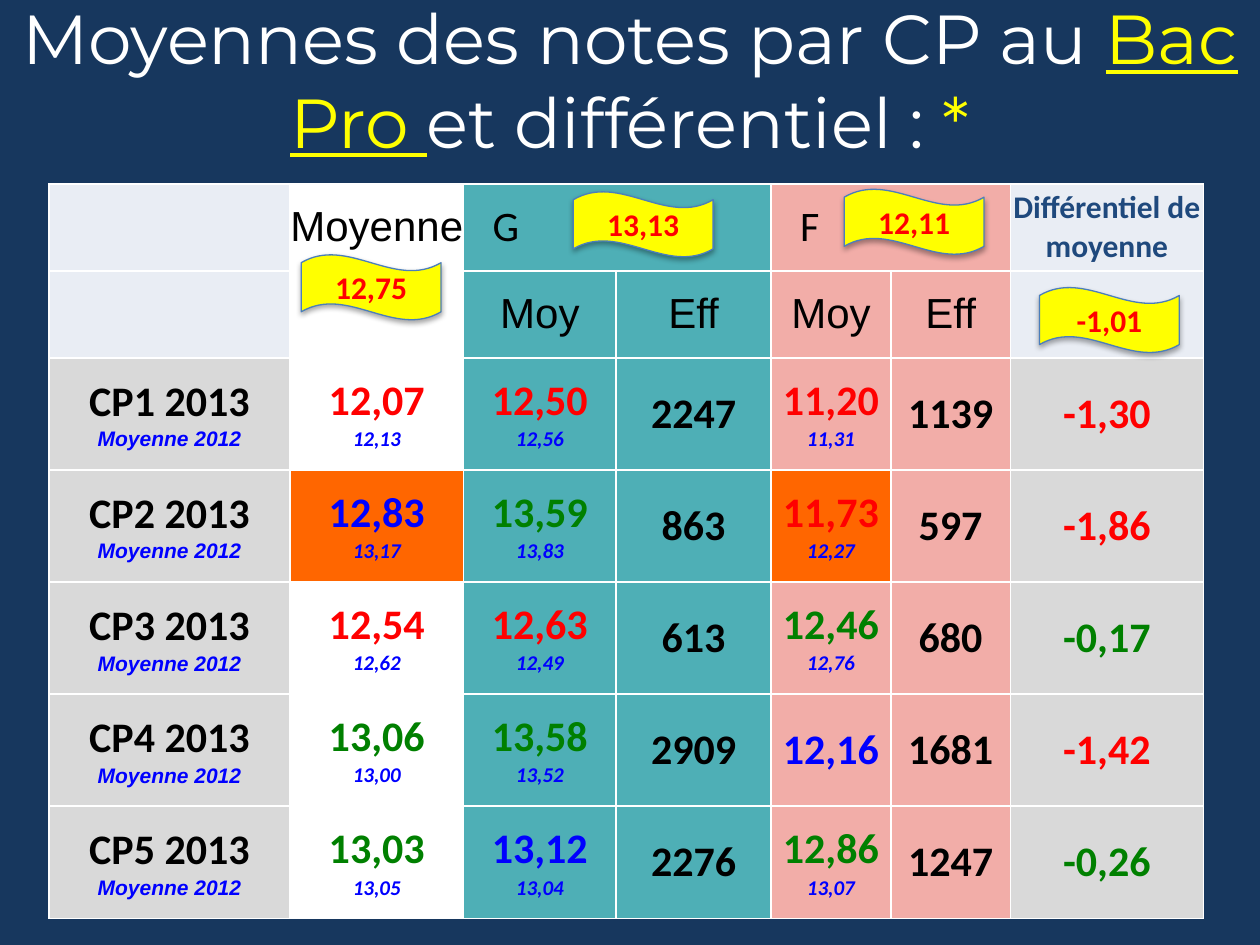
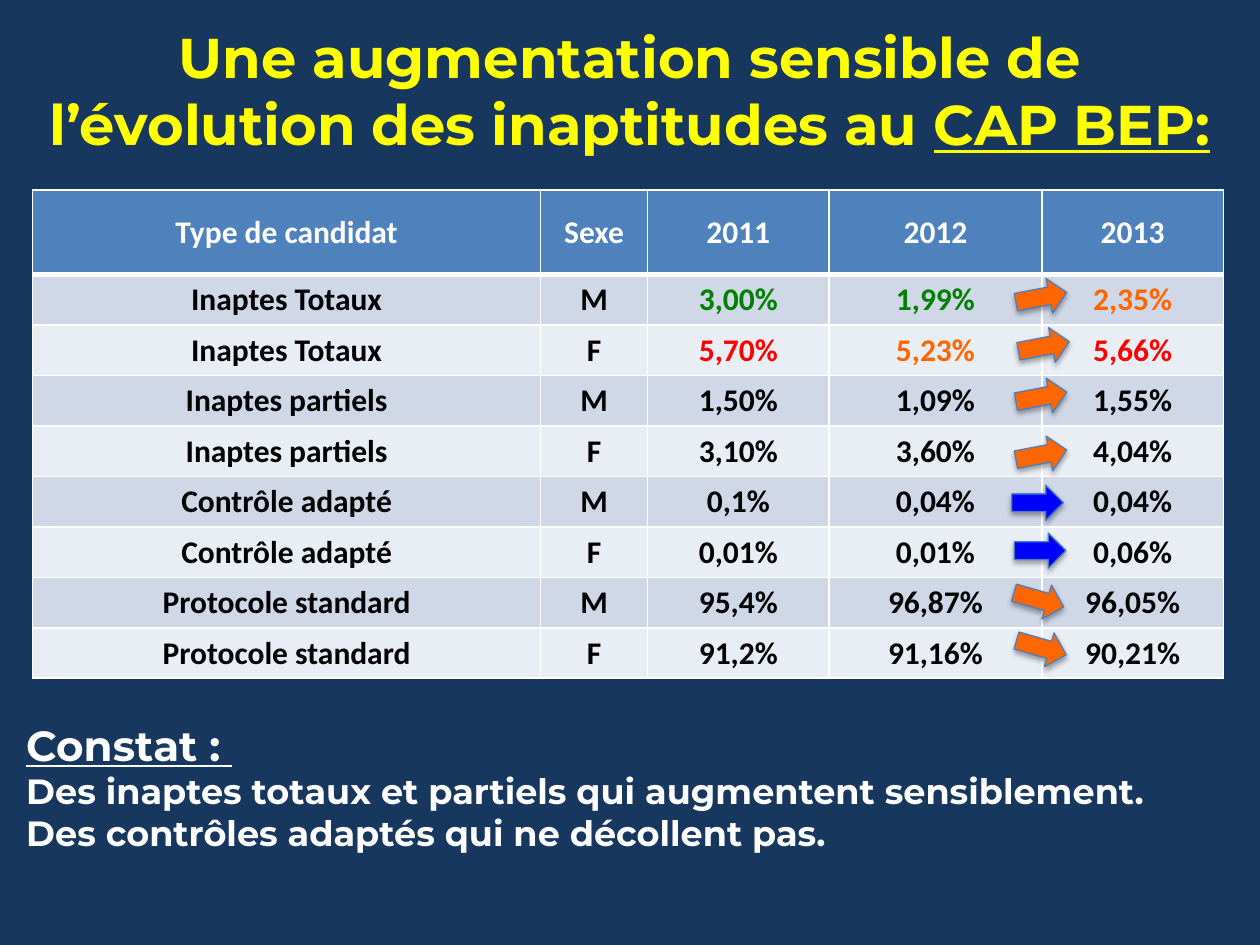
from dataclasses import dataclass
from lxml.etree import SubElement as Sub
from pptx import Presentation as Deck
from pptx.dml.color import RGBColor as Rgb
from pptx.enum.shapes import MSO_SHAPE as Form
from pptx.enum.text import MSO_ANCHOR as Anchor, PP_ALIGN as Align
from pptx.oxml.ns import qn
from pptx.util import Inches, Pt


@dataclass(frozen=True)
class Theme:
    navy: str = "17375E"
    white: str = "FFFFFF"
    black: str = "000000"
    yellow: str = "FFFF00"
    red: str = "FF0000"
    green: str = "008000"
    blue: str = "0000FF"
    orange: str = "FF6600"
    teal: str = "4EAFB6"
    pink: str = "F2ADA8"
    grey: str = "D9D9D9"
    pale: str = "E9EDF4"
    band: str = "D0D8E8"
    head: str = "4F81BD"
    ink: str = "1F497D"
    edge: str = "4B7EBC"
    title: float = 39.6
    topic: float = 32
    large: float = 24
    body: float = 20
    text: float = 18
    small: float = 12
    show: str = "Montserrat"
    main: str = "Calibri"
    plain: str = "Arial"


T = Theme()


@dataclass(frozen=True)
class Face:
    size: float = T.text
    hue: str = T.black
    font: str = T.main
    bold: bool = True
    slant: bool = False
    under: bool = False


PLAIN = Face(T.large, font=T.plain, bold=False)
GENDER = Face(T.large, bold=False)

WAVES = [
    ("12,75", 2.39, 2.02),
    ("12,11", 6.7, 1.5),
    ("13,13", 4.55, 1.52),
    ("-1,01", 8.25, 2.28),
]
MARKS = [
    [("12,07", "12,13", T.red), ("12,50", "12,56", T.red), ("2247", "", T.black),
     ("11,20", "11,31", T.red), ("1139", "", T.black), ("-1,30", "", T.red)],
    [("12,83", "13,17", T.blue), ("13,59", "13,83", T.green), ("863", "", T.black),
     ("11,73", "12,27", T.red), ("597", "", T.black), ("-1,86", "", T.red)],
    [("12,54", "12,62", T.red), ("12,63", "12,49", T.red), ("613", "", T.black),
     ("12,46", "12,76", T.green), ("680", "", T.black), ("-0,17", "", T.green)],
    [("13,06", "13,00", T.green), ("13,58", "13,52", T.green), ("2909", "", T.black),
     ("12,16", "", T.blue), ("1681", "", T.black), ("-1,42", "", T.red)],
    [("13,03", "13,05", T.green), ("13,12", "13,04", T.blue), ("2276", "", T.black),
     ("12,86", "13,07", T.green), ("1247", "", T.black), ("-0,26", "", T.green)],
]
ALERTS = {(3, 1), (3, 4)}

RATES = [
    ("Type de candidat", "Sexe", "2011", "2012", "2013"),
    ("Inaptes Totaux", "M", "3,00%", "1,99%", "2,35%"),
    ("Inaptes Totaux", "F", "5,70%", "5,23%", "5,66%"),
    ("Inaptes partiels", "M", "1,50%", "1,09%", "1,55%"),
    ("Inaptes partiels", "F", "3,10%", "3,60%", "4,04%"),
    ("Contrôle adapté", "M", "0,1%", "0,04%", "0,04%"),
    ("Contrôle adapté", "F", "0,01%", "0,01%", "0,06%"),
    ("Protocole standard", "M", "95,4%", "96,87%", "96,05%"),
    ("Protocole standard", "F", "91,2%", "91,16%", "90,21%"),
]
TINTS = {
    (1, 2): T.green, (1, 3): T.green, (1, 4): T.orange,
    (2, 2): T.red, (2, 3): T.orange, (2, 4): T.red,
}
UP, FLAT, DOWN = (349.3, T.orange), (0, T.blue), (15.9, T.orange)
TRENDS = [
    (8.06, 2.22, UP), (8.08, 2.61, UP), (8.06, 3.01, UP), (8.06, 3.47, UP),
    (8.03, 3.85, FLAT), (8.05, 4.23, FLAT), (8.04, 4.62, DOWN), (8.06, 5, DOWN),
]


def tint(hue):
    return Rgb.from_string(hue)


def paint(fill, hue):
    fill.solid()
    fill.fore_color.rgb = tint(hue)


def write(frame, lines, align=Align.CENTER):
    for at, runs in enumerate(lines):
        para = frame.add_paragraph() if at else frame.paragraphs[0]
        para.alignment = align
        for words, face in runs:
            run = para.add_run()
            run.text = words
            font = run.font
            font.size, font.name = Pt(face.size), face.font
            font.bold, font.italic = face.bold, face.slant
            font.underline = face.under
            font.color.rgb = tint(face.hue)


def add_text(slide, box, lines, align=Align.CENTER, anchor=Anchor.TOP):
    frame = slide.shapes.add_textbox(*map(Inches, box)).text_frame
    frame.word_wrap = True
    frame.vertical_anchor = anchor
    write(frame, lines, align)


def add_shape(slide, form, box, hue, turn=0):
    shape = slide.shapes.add_shape(form, *map(Inches, box))
    shape.rotation = turn
    paint(shape.fill, hue)
    shape.line.color.rgb = tint(T.edge)
    shape.line.width = Pt(0.75)
    shape.shadow.inherit = False
    glow = shape._element.spPr.find(qn("a:effectLst"))
    shade = Sub(glow, qn("a:outerShdw"), blurRad=str(Pt(3.1)), dist=str(Pt(1.8)),
                dir="5400000", rotWithShape="0")
    Sub(Sub(shade, qn("a:srgbClr"), val=T.black), qn("a:alpha"), val="35000")
    return shape


def add_grid(slide, left, top, cols, rows):
    size = map(Inches, (left, top, sum(cols), sum(rows)))
    table = slide.shapes.add_table(len(rows), len(cols), *size).table
    table.first_row = table.horz_banding = False
    for col, wide in zip(table.columns, cols):
        col.width = Inches(wide)
    for row, high in zip(table.rows, rows):
        row.height = Inches(high)
    return table


def set_cell(cell, hue, lines=(), inset=None, top=1, base=1):
    props = cell._tc.get_or_add_tcPr()
    for side, wide in (("L", 1), ("R", 1), ("T", top), ("B", base)):
        line = Sub(props, qn("a:ln" + side), w=str(Pt(wide)))
        Sub(Sub(line, qn("a:solidFill")), qn("a:srgbClr"), val=T.white)
    paint(cell.fill, hue)
    cell.vertical_anchor = Anchor.MIDDLE
    if inset is not None:
        cell.margin_left = cell.margin_right = Inches(inset)
        cell.margin_top = cell.margin_bottom = 0
    write(cell.text_frame, lines, Align.LEFT if inset else Align.CENTER)


def add_slide(deck):
    slide = deck.slides.add_slide(deck.slide_layouts[6])
    paint(slide.background.fill, T.navy)
    return slide


def mark_lines(mark):
    value, past, hue = mark
    lines = [[(value, Face(T.large, hue))]]
    if past:
        lines.append([(past, Face(T.small, T.blue, slant=True))])
    return lines


def name_lines(rank):
    past = Face(T.small, T.blue, T.plain, slant=True)
    return [[(f"CP{rank} 2013", Face(T.large))], [("Moyenne 2012", past)]]


def add_marks(slide):
    table = add_grid(slide, 0.39, 1.46, [1.91, 1.38, 1.21, 1.23, 0.95, 0.95, 1.53],
                     [0.69] * 2 + [0.89] * 5)
    heads = {
        (0, 1): ("Moyenne", PLAIN),
        (0, 2): ("G", GENDER),
        (0, 4): ("F", GENDER),
        (0, 6): ("Différentiel de moyenne", Face(hue=T.ink)),
    }
    for col in range(2, 6):
        heads[1, col] = ("Eff" if col % 2 else "Moy", PLAIN)
    ends = T.white, T.teal, T.teal, T.pink, T.pink
    tops, fills = (T.pale, *ends, T.pale), (T.grey, *ends, T.grey)
    for (row, col), head in heads.items():
        inset = 0.23 if head[1] == GENDER else 0
        set_cell(table.cell(row, col), tops[col], [[head]], inset)
    for row in range(2):
        for col, hue in enumerate(tops):
            if (row, col) not in heads:
                set_cell(table.cell(row, col), hue)
    for col in (2, 4):
        table.cell(0, col).merge(table.cell(0, col + 1))
    for row, marks in enumerate(MARKS, 2):
        texts = [name_lines(row - 1), *map(mark_lines, marks)]
        for col, lines in enumerate(texts):
            hue = T.orange if (row, col) in ALERTS else fills[col]
            set_cell(table.cell(row, col), hue, lines, 0)


def add_rates(slide):
    table = add_grid(slide, 0.26, 1.51, [4.03, 0.85, 1.44, 1.69, 1.44],
                     [0.67] + [0.4] * 8)
    for row, texts in enumerate(RATES):
        fill = (T.band if row % 2 else T.pale) if row else T.head
        for col, words in enumerate(texts):
            hue = TINTS.get((row, col), T.black) if row else T.white
            set_cell(table.cell(row, col), fill, [[(words, Face(hue=hue))]],
                     top=3 if row == 1 else 1, base=1 if row else 3)


def draw_marks(deck):
    slide = add_slide(deck)
    white = Face(T.title, T.white, T.show, False)
    gold = Face(T.title, T.yellow, T.show, False)
    lined = Face(T.title, T.yellow, T.show, False, under=True)
    title = [("Moyennes des notes par CP au ", white), ("Bac Pro ", lined),
             ("et différentiel : ", white), ("*", gold)]
    add_text(slide, (0, 0, 10, 1.25), [title], anchor=Anchor.MIDDLE)
    add_marks(slide)
    for words, left, top in WAVES:
        wave = add_shape(slide, Form.WAVE, (left, top, 1.11, 0.52), T.yellow)
        write(wave.text_frame, [[(words, Face(hue=T.red))]])


def draw_rates(deck):
    slide = add_slide(deck)
    add_rates(slide)
    gold = Face(T.topic, T.yellow, T.show)
    lined = Face(T.topic, T.yellow, T.show, under=True)
    add_text(slide, (0, 0.13, 10, 1.18), [
        [("Une augmentation sensible de", gold)],
        [("l’évolution des inaptitudes au ", gold), ("CAP BEP:", lined)],
    ])
    note = Face(T.body, T.white, T.show)
    add_text(slide, (0.11, 5.66, 9.89, 1.18), [
        [("Constat : ", Face(T.large, T.white, T.show, under=True))],
        [("Des inaptes totaux et partiels qui augmentent sensiblement.", note)],
        [("Des contrôles adaptés qui ne décollent pas.", note)],
    ], Align.LEFT)
    for left, top, (turn, hue) in TRENDS:
        add_shape(slide, Form.RIGHT_ARROW, (left, top, 0.41, 0.28), hue, turn)


def main():
    deck = Deck()
    deck.slide_width, deck.slide_height = Inches(10), Inches(7.5)
    draw_marks(deck)
    draw_rates(deck)
    deck.save("out.pptx")


if __name__ == "__main__":
    main()
